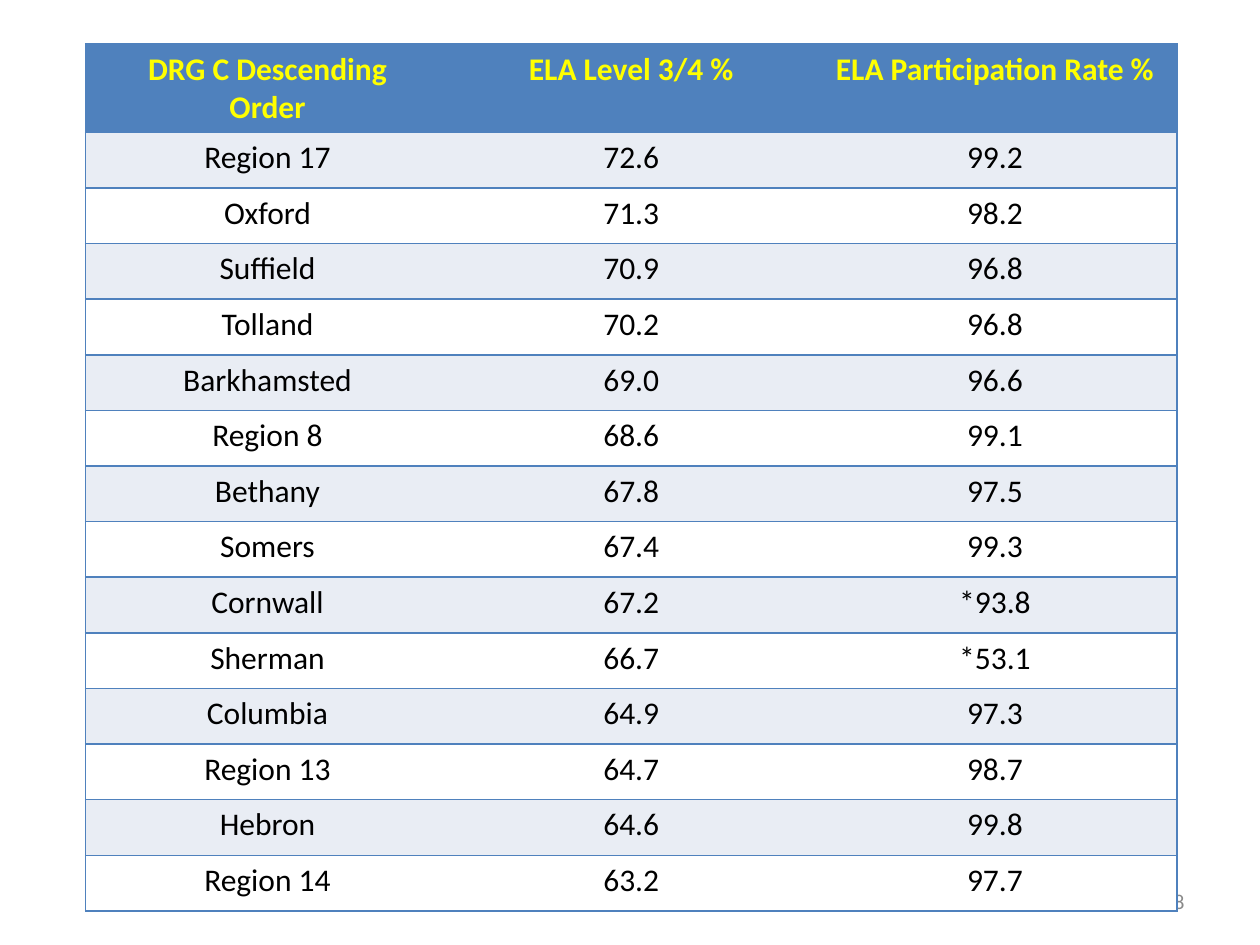
from lxml import etree
from pptx import Presentation
from pptx.dml.color import RGBColor
from pptx.enum import text
from pptx.oxml import ns
from pptx.util import Inches, Pt

BLUE = RGBColor(0x4F, 0x81, 0xBD)
PALE = RGBColor(0xE9, 0xED, 0xF4)
WHITE = RGBColor(0xFF, 0xFF, 0xFF)
YELLOW = RGBColor(0xFF, 0xFF, 0x00)
BLACK = RGBColor(0, 0, 0)
GRAY = RGBColor(0x89, 0x89, 0x89)
FONT = "Calibri"

HEADINGS = ("DRG C Descending\nOrder", "ELA Level 3/4 %", "ELA Participation Rate %")
DISTRICTS = (
    ("Region 17", "72.6", "99.2"),
    ("Oxford", "71.3", "98.2"),
    ("Suffield", "70.9", "96.8"),
    ("Tolland", "70.2", "96.8"),
    ("Barkhamsted", "69.0", "96.6"),
    ("Region 8", "68.6", "99.1"),
    ("Bethany", "67.8", "97.5"),
    ("Somers", "67.4", "99.3"),
    ("Cornwall", "67.2", "*93.8"),
    ("Sherman", "66.7", "*53.1"),
    ("Columbia", "64.9", "97.3"),
    ("Region 13", "64.7", "98.7"),
    ("Hebron", "64.6", "99.8"),
    ("Region 14", "63.2", "97.7"),
)


def write(frame, words, size, color, align, bold=False):
    """Put each line of words in its own paragraph."""
    for index, line in enumerate(words.split("\n")):
        para = frame.add_paragraph() if index else frame.paragraphs[0]
        para.alignment = align
        span = para.add_run()
        span.text = line
        span.font.name = FONT
        span.font.size = Pt(size)
        span.font.bold = bold
        span.font.color.rgb = color


def add_borders(cell, visible):
    """Draw the sides named in visible (of L, R, T, B) and clear the others."""
    properties = cell._tc.get_or_add_tcPr()
    for side in "LRTB":
        line = etree.SubElement(properties, ns.qn(f"a:ln{side}"), w=str(Pt(1)))
        if side in visible:
            fill = etree.SubElement(line, ns.qn("a:solidFill"))
            etree.SubElement(fill, ns.qn("a:srgbClr"), val=str(BLUE))
        else:
            etree.SubElement(line, ns.qn("a:noFill"))


def add_page_number(page, left, top, width, height, number):
    frame = page.shapes.add_textbox(left, top, width, height).text_frame
    frame.word_wrap = True
    frame.vertical_anchor = text.MSO_ANCHOR.MIDDLE
    write(frame, number, 12, GRAY, text.PP_ALIGN.RIGHT)


def add_results_table(page, left, top, width, height):
    rows = (HEADINGS,) + DISTRICTS
    last = len(HEADINGS) - 1
    table = page.shapes.add_table(len(rows), len(HEADINGS), left, top, width, height).table
    heading_height = Inches(0.7)
    for column in table.columns:
        column.width = width // len(HEADINGS)
    for r, values in enumerate(rows):
        heading = r == 0
        table.rows[r].height = heading_height if heading else (height - heading_height) // len(DISTRICTS)
        for c, value in enumerate(values):
            cell = table.cell(r, c)
            add_borders(cell, "TB" + ("L" if c == 0 else "") + ("R" if c == last else ""))
            cell.fill.solid()
            cell.fill.fore_color.rgb = BLUE if heading else PALE if r % 2 else WHITE
            write(cell.text_frame, value, 18, YELLOW if heading else BLACK,
                  text.PP_ALIGN.CENTER, bold=heading)


def main():
    deck = Presentation()
    deck.slide_width, deck.slide_height = Inches(10), Inches(7.5)
    page = deck.slides.add_slide(deck.slide_layouts[6])
    add_page_number(page, Inches(7.17), Inches(6.95), Inches(2.33), Inches(0.4), "18")
    add_results_table(page, Inches(0.68), Inches(0.35), Inches(8.66), Inches(6.88))
    deck.save("out.pptx")


if __name__ == "__main__":
    main()
